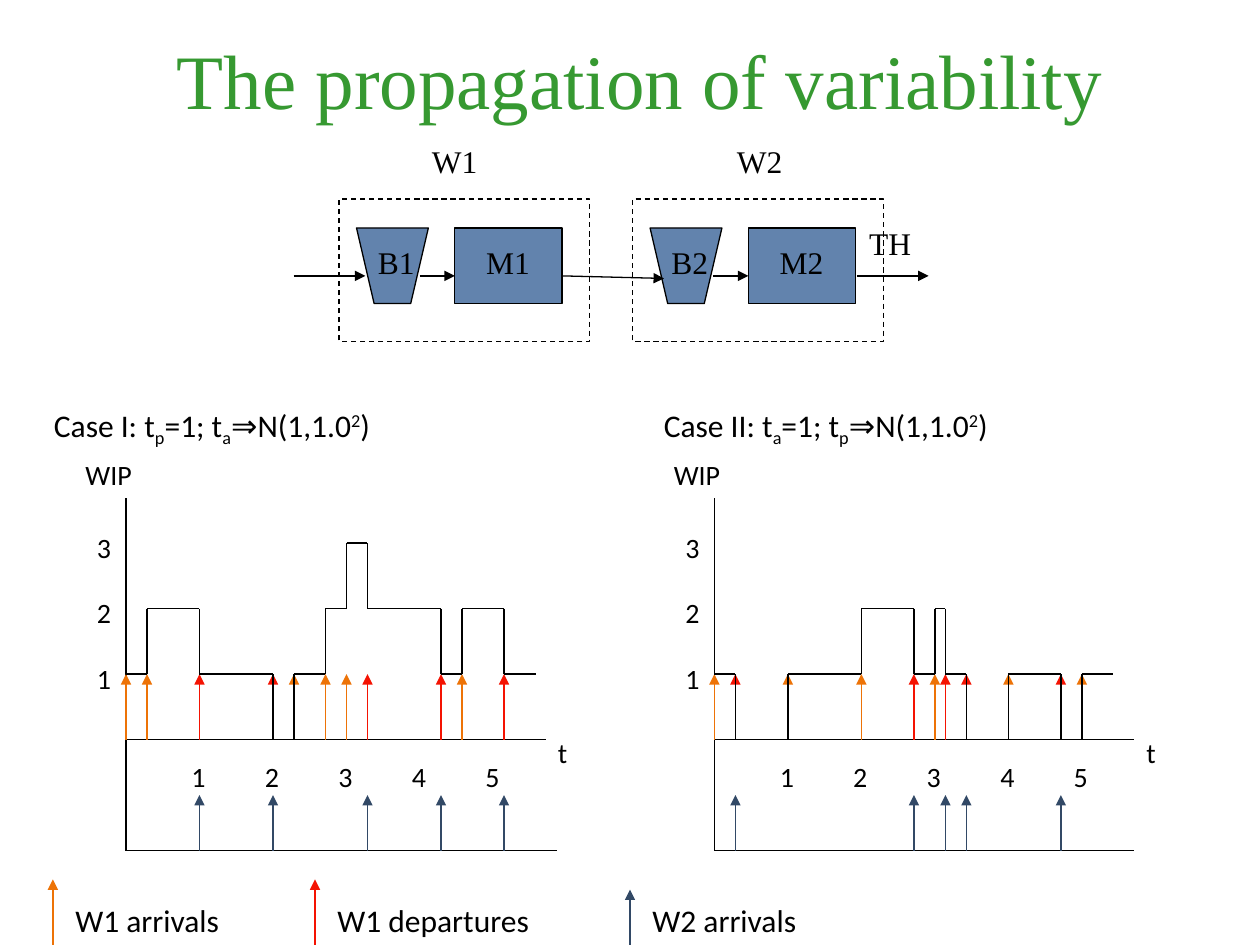
import pptx
import pptx.util
import pptx.dml.color
import pptx.enum.dml
import pptx.enum.shapes
import pptx.enum.text
import pptx.oxml
import pptx.oxml.ns
from lxml import etree

Inches, Pt = pptx.util.Inches, pptx.util.Pt
RGBColor = pptx.dml.color.RGBColor
qn = pptx.oxml.ns.qn

BLACK = RGBColor(0x00, 0x00, 0x00)
GREEN = RGBColor(0x36, 0x99, 0x31)
STEEL = RGBColor(0x62, 0x83, 0xAD)
ORANGE = RGBColor(0xED, 0x73, 0x07)
RED = RGBColor(0xF4, 0x13, 0x02)
NAVY = RGBColor(0x32, 0x49, 0x66)
SERIF, SANS = "Times New Roman", "Calibri"

TICK = 1 / 12   # time step along the axis, inches
RISE = 0.52     # height of one WIP unit, inches


def add_run(para, text, size, font, color=BLACK, base=0):
    run = para.add_run()
    run.text = text
    run.font.size = Pt(size)
    run.font.name = font
    run.font.color.rgb = color
    if base:
        run.font._element.set("baseline", str(base * 1000))


def add_text(slide, x, y, w, h, runs, size=18, font=SANS):
    """Runs are (text, baseline percent) pairs."""
    box = slide.shapes.add_textbox(Inches(x), Inches(y), Inches(w), Inches(h))
    box.text_frame.word_wrap = True
    for text, base in runs:
        add_run(box.text_frame.paragraphs[0], text, size, font, base=base)


def add_line(slide, x1, y1, x2, y2, color=BLACK, arrow=False):
    line = slide.shapes.add_connector(
        pptx.enum.shapes.MSO_CONNECTOR.STRAIGHT,
        Inches(x1), Inches(y1), Inches(x2), Inches(y2))
    line.line.color.rgb = color
    line.line.width = Pt(0.75)
    if arrow:
        etree.SubElement(line.line._get_or_add_ln(), qn("a:tailEnd"), type="triangle")
    etree.SubElement(line._element.spPr, qn("a:effectLst"))


def style(shape, fill=None):
    shape.shadow.inherit = False
    if fill is None:
        shape.fill.background()
    else:
        shape.fill.solid()
        shape.fill.fore_color.rgb = fill
    shape.line.color.rgb = BLACK
    shape.line.width = Pt(0.75)


def add_rect(slide, x, y, w, h, fill=None):
    rect = slide.shapes.add_shape(
        pptx.enum.shapes.MSO_SHAPE.RECTANGLE,
        Inches(x), Inches(y), Inches(w), Inches(h))
    style(rect, fill)
    return rect


def add_title(slide, x, y, w, h):
    title = slide.shapes.title
    title.left, title.top = Inches(x), Inches(y)
    title.width, title.height = Inches(w), Inches(h)
    frame = title.text_frame
    frame.vertical_anchor = pptx.enum.text.MSO_ANCHOR.MIDDLE
    para = frame.paragraphs[0]
    para.alignment = pptx.enum.text.PP_ALIGN.CENTER
    add_run(para, "The propagation of variability", 44, SERIF, GREEN)


def add_station(slide, x, y, num, name_x):
    """Workstation: a buffer and a machine in a dashed frame at (x, y)."""
    # Machine
    add_rect(slide, x + 0.92, y + 0.23, 0.85, 0.6, STEEL)
    # Buffer funnel
    left, top = x + 0.14, y + 0.23
    path = slide.shapes.build_freeform(Inches(left), Inches(top))
    path.add_line_segments(
        [(Inches(left + dx), Inches(top + dy))
         for dx, dy in ((0.14, 0.6), (0.43, 0.6), (0.57, 0))], close=True)
    style(path.convert_to_shape(), STEEL)
    # Frame, inner flow and names
    frame = add_rect(slide, x, y, 1.99, 1.13)
    frame.line.dash_style = pptx.enum.dml.MSO_LINE.DASH
    add_line(slide, x + 0.64, y + 0.61, x + 0.92, y + 0.61, arrow=True)
    add_text(slide, x + 0.21, y + 0.3, 0.59, 0.5, [(f"B{num}", 0)], font=SERIF)
    add_text(slide, x + 1.07, y + 0.3, 0.66, 0.5, [(f"M{num}", 0)], font=SERIF)
    add_text(slide, name_x, y - 0.5, 0.68, 0.5, [(f"W{num}", 0)], font=SERIF)


def add_flow(slide, x, y):
    """Two stations in series, with the flow through them."""
    add_station(slide, x, y, 1, 3.33)
    add_station(slide, x + 2.33, y, 2, 5.75)
    mid = y + 0.61
    for start, end, drop in ((-0.36, 0.21, 0), (1.78, 2.58, 0.02), (4.11, 4.68, 0)):
        add_line(slide, x + start, mid, x + end, mid + drop, arrow=True)
    add_text(slide, x + 4.11, y + 0.15, 0.65, 0.5, [("TH", 0)], font=SERIF)


def add_chart(slide, x, y, came, left, stop, low):
    """WIP over time from (x, y); came, left and stop are times in ticks."""
    # Axes
    add_line(slide, x, y, x + 3.33, y)
    add_line(slide, x, y, x, y - 1.92)
    add_line(slide, x, y, x, y + 0.88)
    add_line(slide, x, y + 0.88, x + low, y + 0.88)
    # Labels
    add_text(slide, x - 0.42, y - 2.29, 0.62, 0.37, [("WIP", 0)], 16)
    add_text(slide, x + 3.33, y - 0.08, 0.32, 0.37, [("t", 0)], 16)
    for num in range(1, 4):
        add_text(slide, x - 0.33, y - 0.15 - num * RISE, 0.32, 0.37, [(str(num), 0)], 16)
    for num in range(1, 6):
        add_text(slide, x + 0.42 + (num - 1) * 7 * TICK, y + 0.11, 0.32, 0.37,
                 [(str(num), 0)], 16)
    # Event arrows: each departure from W1 is an arrival at W2
    for times, base, size, color in ((came, y, RISE, ORANGE), (left, y, RISE, RED),
                                     (left, y + 0.88, 0.44, NAVY)):
        for time in times:
            spot = x + time * TICK
            add_line(slide, spot, base, spot, base - size, color, arrow=True)
    # Step curve: up at each arrival, down at each departure
    events = sorted([(time, 1) for time in came] + [(time, -1) for time in left])
    level = 0
    for (time, step), (after, _) in zip(events, events[1:] + [(stop, 0)]):
        spot, old = x + time * TICK, y - level * RISE
        level += step
        new = y - level * RISE
        if time:
            add_line(slide, spot, old, spot, new)
        if level:
            add_line(slide, spot, new, x + after * TICK, new)


def add_case(slide, x, y, name, first, second):
    add_text(slide, x, y, 4.1, 0.5, [
        (f"Case {name}: t", 0), (first, -25), ("=1; t", 0), (second, -25),
        ("⇒N(1,1.0", 0), ("2", 30), (")", 0)])


def add_legend(slide, y):
    for x, size, color, text in ((0.42, 0.52, ORANGE, "W1 arrivals"),
                                 (2.5, 0.52, RED, "W1 departures"),
                                 (5, 0.44, NAVY, "W2 arrivals")):
        add_line(slide, x, y, x, y - size, color, arrow=True)
        add_text(slide, x + 0.08, y - 0.4, 2, 0.4, [(text, 0)])


def main():
    deck = pptx.Presentation()
    deck.slide_width, deck.slide_height = Inches(10), Inches(7.5)
    slide = deck.slides.add_slide(deck.slide_layouts[5])
    add_title(slide, 0.83, 0, 8.5, 1.25)
    add_flow(slide, 2.69, 1.58)
    add_case(slide, 0.33, 3.17, "I", "p", "a")
    add_case(slide, 5.17, 3.17, "II", "a", "p")
    add_chart(slide, 1, 5.87, (0, 2, 16, 19, 21, 32), (7, 14, 23, 30, 36), 39, 3.42)
    add_chart(slide, 5.67, 5.87, range(0, 36, 7), (2, 19, 22, 24, 33), 38, 3.33)
    add_legend(slide, 7.5)
    deck.save("out.pptx")


if __name__ == "__main__":
    main()
